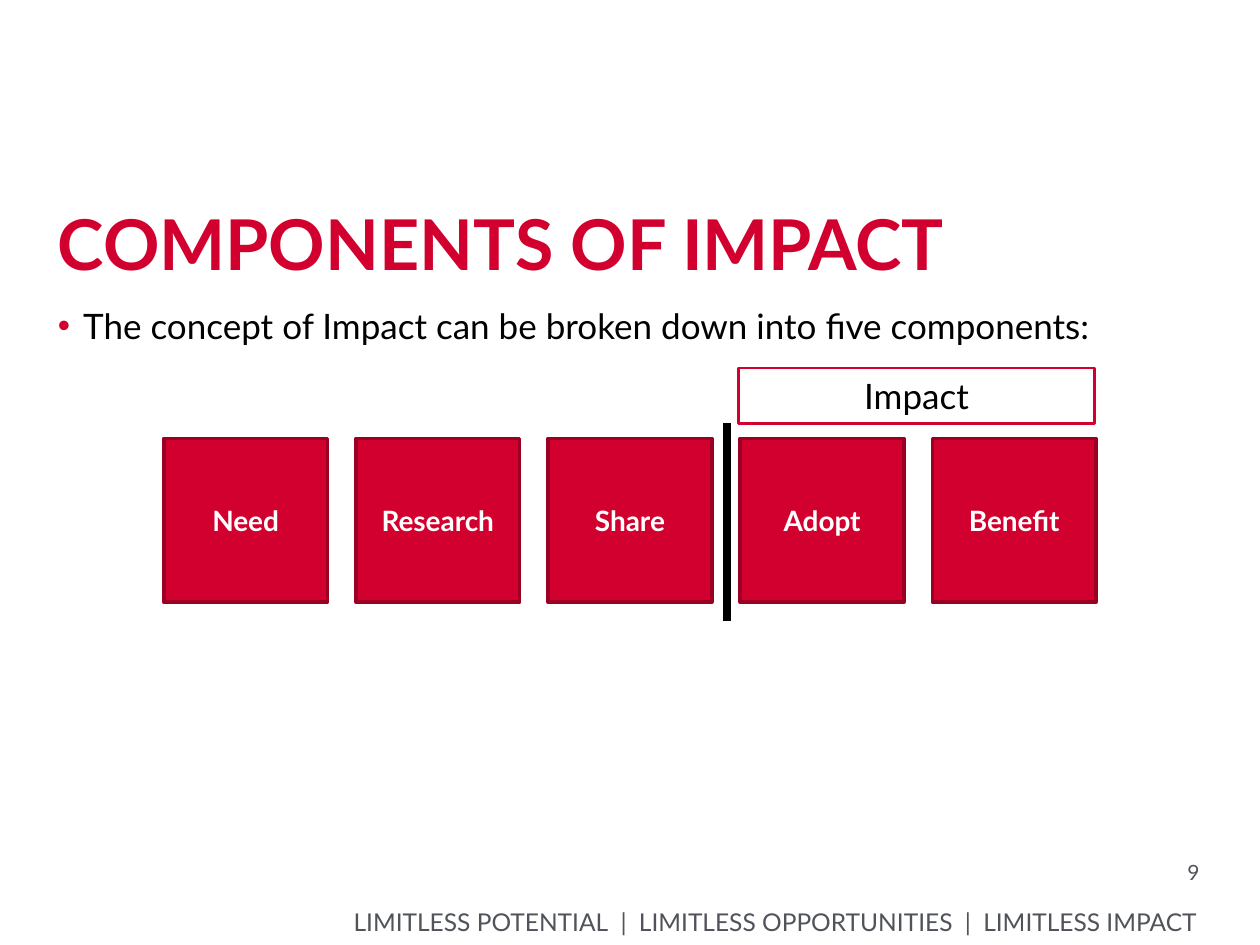
from lxml import etree
from pptx import Presentation
from pptx.dml.color import RGBColor
from pptx.enum.shapes import MSO_CONNECTOR, MSO_SHAPE
from pptx.enum.text import MSO_ANCHOR, PP_ALIGN
from pptx.oxml.ns import qn
from pptx.util import Inches, Pt

RED = RGBColor(0xD2, 0x00, 0x2E)
DARK_RED = RGBColor(0x9B, 0x00, 0x22)
GRAY = RGBColor(0x50, 0x53, 0x5A)
BLACK = RGBColor(0, 0, 0)
WHITE = RGBColor(0xFF, 0xFF, 0xFF)
FONT = "Lato"
RECT = MSO_SHAPE.RECTANGLE
STRAIGHT = MSO_CONNECTOR.STRAIGHT
TOP, MIDDLE, BOTTOM = MSO_ANCHOR.TOP, MSO_ANCHOR.MIDDLE, MSO_ANCHOR.BOTTOM
LEFT, CENTER, RIGHT = PP_ALIGN.LEFT, PP_ALIGN.CENTER, PP_ALIGN.RIGHT
STEPS = ["Need", "Research", "Share", "Adopt", "Benefit"]


def write(tf, text, size, color, bold=False, align=LEFT, anchor=TOP, wrap=True):
    """Put one formatted paragraph in a text frame and return it."""
    tf.word_wrap = wrap
    tf.vertical_anchor = anchor
    p = tf.paragraphs[0]
    p.text = text
    p.alignment = align
    p.font.name = FONT
    p.font.size = Pt(size)
    p.font.bold = bold
    p.font.color.rgb = color
    return p


def clear_margins(tf):
    """Remove the insets of a text frame."""
    tf.margin_left = tf.margin_top = tf.margin_right = tf.margin_bottom = 0


def add_title(s, x, y, w, h):
    """Place and format the title placeholder."""
    sp = s.shapes.title
    sp.left, sp.top, sp.width, sp.height = map(Inches, (x, y, w, h))
    clear_margins(sp.text_frame)
    write(sp.text_frame, "COMPONENTS OF IMPACT", 40, RED, bold=True,
          anchor=BOTTOM, wrap=False)


def add_text(s, x, y, w, h, text, size, color, **style):
    """Add a text box without insets and return its paragraph."""
    tf = s.shapes.add_textbox(*map(Inches, (x, y, w, h))).text_frame
    clear_margins(tf)
    return write(tf, text, size, color, **style)


def add_body(s, x, y, w, h):
    """Add the bulleted introduction."""
    p = add_text(s, x, y, w, h,
                 "The concept of Impact can be broken down into five components:",
                 20, BLACK)
    pPr = p._p.get_or_add_pPr()
    pPr.set("marL", str(Inches(0.2)))
    pPr.set("indent", str(-Inches(0.2)))
    bu_color = etree.Element(qn("a:buClr"))
    etree.SubElement(bu_color, qn("a:srgbClr"), val=str(RED))
    bu_font = etree.Element(qn("a:buFont"), typeface="Arial")
    bu_char = etree.Element(qn("a:buChar"), char="•")
    for i, item in enumerate((bu_color, bu_font, bu_char)):
        pPr.insert(i, item)


def add_box(s, x, y, w, h, line, width, fill=None):
    """Add an outlined rectangle, filled if a colour is given."""
    sp = s.shapes.add_shape(RECT, *map(Inches, (x, y, w, h)))
    sp.shadow.inherit = False
    if fill is None:
        sp.fill.background()
    else:
        sp.fill.solid()
        sp.fill.fore_color.rgb = fill
    sp.line.color.rgb = line
    sp.line.width = Pt(width)
    return sp


def add_steps(s, x, y, w, size):
    """Spread the five square steps evenly over a row."""
    pitch = (w - size) / (len(STEPS) - 1)
    for i, step in enumerate(STEPS):
        sp = add_box(s, x + i * pitch, y, size, size, DARK_RED, 2, RED)
        write(sp.text_frame, step, 16, WHITE, bold=True, align=CENTER, anchor=MIDDLE)


def add_divider(s, x, y, h):
    """Add the thick vertical line before the impact steps."""
    line = s.shapes.add_connector(STRAIGHT, *map(Inches, (x, y, x, y + h)))
    line.line.color.rgb = BLACK
    line.line.width = Pt(5)
    etree.SubElement(line._element.spPr, qn("a:effectLst"))


def add_impact(s, x, y, w, h):
    """Add the label above the impact steps."""
    sp = add_box(s, x, y, w, h, RED, 1.5)
    write(sp.text_frame, "Impact", 20, BLACK, align=CENTER, anchor=MIDDLE, wrap=False)


def add_footer(s, x, y, w, h):
    """Add the right-aligned motto."""
    motto = "\u2002|\u2002".join(
        f"LIMITLESS {word}" for word in ("POTENTIAL", "OPPORTUNITIES", "IMPACT"))
    add_text(s, x, y, w, h, motto, 14, GRAY, align=RIGHT, anchor=BOTTOM)


def main():
    """Build and save the slide."""
    prs = Presentation()
    prs.slide_width, prs.slide_height = Inches(10), Inches(7.5)
    s = prs.slides.add_slide(prs.slide_layouts[5])
    add_footer(s, 2.11, 7.19, 7.4, 0.24)
    add_title(s, 0.46, 1.35, 9.06, 0.91)
    add_body(s, 0.46, 2.42, 9.06, 4.33)
    add_text(s, 8.78, 6.82, 0.74, 0.28, "9", 12, GRAY, align=RIGHT)
    add_steps(s, 1.3, 3.48, 7.4, 1.3)
    add_divider(s, 5.77, 3.36, 1.57)
    add_impact(s, 5.86, 2.92, 2.83, 0.44)
    prs.save("out.pptx")


if __name__ == "__main__":
    main()
